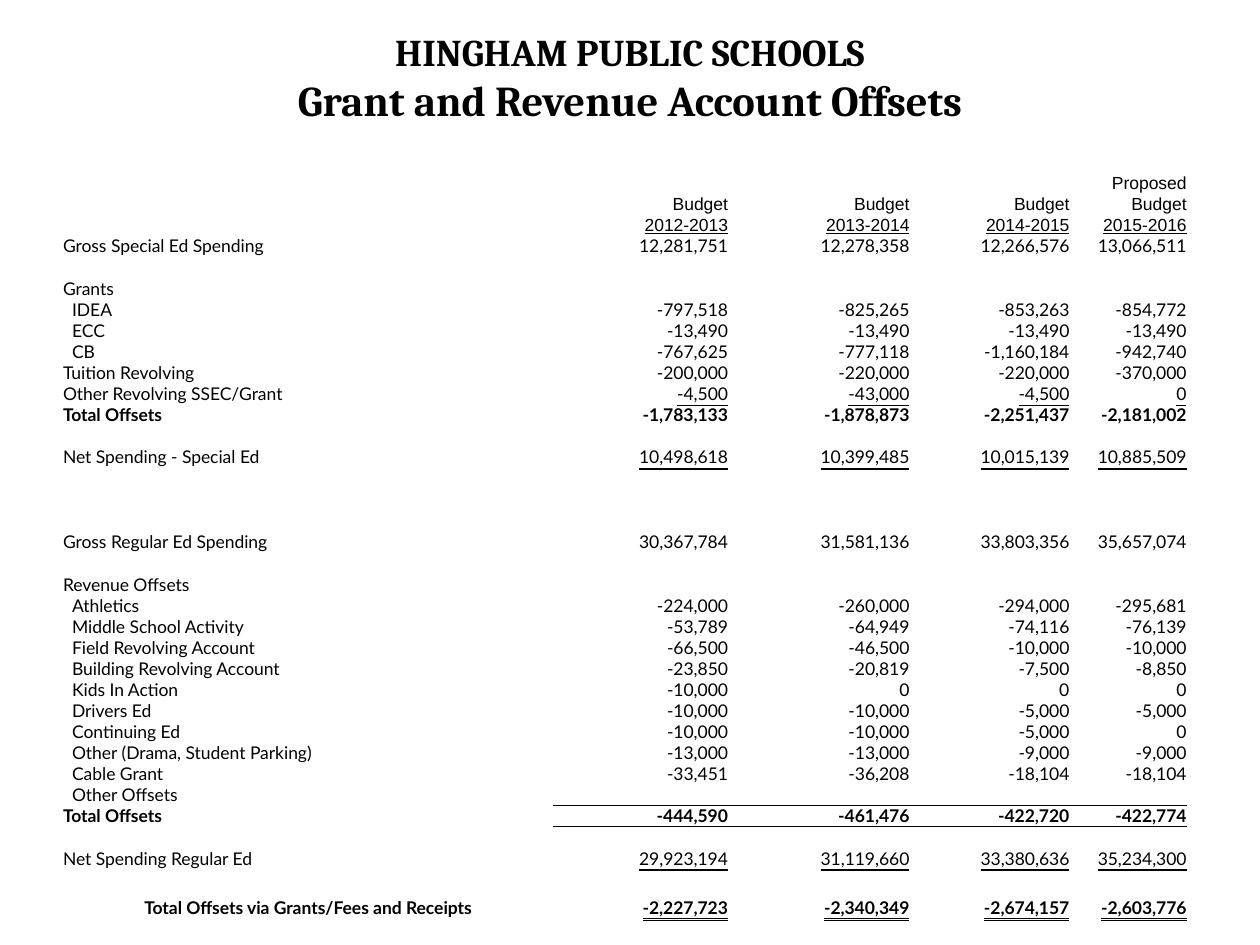
from lxml.etree import SubElement
from pptx import Presentation
from pptx.dml.color import RGBColor
from pptx.enum.text import MSO_ANCHOR, MSO_AUTO_SIZE, MSO_UNDERLINE, PP_ALIGN
from pptx.oxml import parse_xml
from pptx.oxml.ns import nsdecls, qn
from pptx.util import Pt

COLORS = {"text": "000000", "rule": "000000"}
NO_GRID_STYLE = "{2D5ABB26-0587-4C30-8999-92F81FD0307C}"
COLUMN_WIDTHS = [280, 100, 103.7, 91.4, 67]
FIRST_ROW, ROW, LAST_ROW = 32.4, 12, 16

HEADER = {"name": "Arial"}
YEARS = {"name": "Arial", "underline": True}
PLAIN = {}
INDENTED = {"indent": 5.2}
SUBTOTALED = {"underline": True}
TOTAL = {"bold": True}
RULED = {"indent": 5.2, "border": "lnB"}
RULED_TOTAL = {"bold": True, "border": "lnT"}
NET = {"underline": MSO_UNDERLINE.DOUBLE_LINE}
GRAND_TOTAL = {"bold": True, "underline": MSO_UNDERLINE.DOUBLE_LINE, "centered": True}

BLANK = ("", [""] * 4, PLAIN)
BUDGET = [
    ("", ["", "", "", "Proposed"], HEADER),
    ("", ["Budget"] * 4, HEADER),
    ("", ["2012-2013", "2013-2014", "2014-2015", "2015-2016"], YEARS),
    ("Gross Special Ed Spending", [12281751, 12278358, 12266576, 13066511], PLAIN),
    BLANK,
    ("Grants", [""] * 4, PLAIN),
    ("IDEA", [-797518, -825265, -853263, -854772], INDENTED),
    ("ECC", [-13490] * 4, INDENTED),
    ("CB", [-767625, -777118, -1160184, -942740], INDENTED),
    ("Tuition Revolving", [-200000, -220000, -220000, -370000], PLAIN),
    ("Other Revolving SSEC/Grant", [-4500, -43000, -4500, 0], SUBTOTALED),
    ("Total Offsets", [-1783133, -1878873, -2251437, -2181002], TOTAL),
    BLANK,
    ("Net Spending - Special Ed", [10498618, 10399485, 10015139, 10885509], NET),
    BLANK,
    BLANK,
    BLANK,
    ("Gross Regular Ed Spending", [30367784, 31581136, 33803356, 35657074], PLAIN),
    BLANK,
    ("Revenue Offsets", [""] * 4, PLAIN),
    ("Athletics", [-224000, -260000, -294000, -295681], INDENTED),
    ("Middle School Activity", [-53789, -64949, -74116, -76139], INDENTED),
    ("Field Revolving Account", [-66500, -46500, -10000, -10000], INDENTED),
    ("Building Revolving Account", [-23850, -20819, -7500, -8850], INDENTED),
    ("Kids In Action", [-10000, 0, 0, 0], INDENTED),
    ("Drivers Ed", [-10000, -10000, -5000, -5000], INDENTED),
    ("Continuing Ed", [-10000, -10000, -5000, 0], INDENTED),
    ("Other (Drama, Student Parking)", [-13000, -13000, -9000, -9000], INDENTED),
    ("Cable Grant", [-33451, -36208, -18104, -18104], INDENTED),
    ("Other Offsets", [""] * 4, RULED),
    ("Total Offsets", [-444590, -461476, -422720, -422774], RULED_TOTAL),
    BLANK,
    ("Net Spending Regular Ed", [29923194, 31119660, 33380636, 35234300], NET),
    BLANK,
    ("Total Offsets via Grants/Fees and Receipts",
     [-2227723, -2340349, -2674157, -2603776], GRAND_TOTAL),
]


class BudgetSlide:
    title_font = {"name": "Cambria", "bold": True}
    table_font = {"name": "Lato", "size": Pt(10), "bold": False, "underline": False}

    def __init__(self, presentation):
        self.slide = presentation.slides.add_slide(presentation.slide_layouts[5])

    def apply(self, target, values):
        for attribute, value in values.items():
            setattr(target, attribute, value)

    def add_run(self, paragraph, text, font):
        run = paragraph.add_run()
        run.text = text
        self.apply(run.font, font)
        run.font.color.rgb = RGBColor.from_string(COLORS["text"])

    def add_title(self, lines, left, top, width, height):
        title = self.slide.shapes.title
        self.apply(title, {"left": Pt(left), "top": Pt(top),
                           "width": Pt(width), "height": Pt(height)})
        frame = title.text_frame
        self.apply(frame, {"word_wrap": True, "auto_size": MSO_AUTO_SIZE.NONE,
                           "vertical_anchor": MSO_ANCHOR.MIDDLE})
        paragraph = frame.paragraphs[0]
        paragraph.alignment = PP_ALIGN.CENTER
        for number, (text, size) in enumerate(lines):
            if number:
                paragraph.add_line_break()
            self.add_run(paragraph, text, self.title_font | {"size": Pt(size)})

    def add_border(self, cell, side):
        line = parse_xml(
            f'<a:{side} {nsdecls("a")} w="{Pt(1)}"><a:solidFill>'
            f'<a:srgbClr val="{COLORS["rule"]}"/></a:solidFill></a:{side}>')
        cell._tc.get_or_add_tcPr().insert(0, line)

    def fill_cell(self, cell, text, alignment, font, indent=0):
        self.apply(cell, {"margin_left": Pt(indent), "margin_right": 0,
                          "margin_top": 0, "margin_bottom": 0,
                          "vertical_anchor": MSO_ANCHOR.BOTTOM})
        cell.fill.background()
        paragraph = cell.text_frame.paragraphs[0]
        paragraph.alignment = alignment
        if text:
            self.add_run(paragraph, text, self.table_font | font)
        else:
            SubElement(paragraph._p, qn("a:endParaRPr"), sz="1000")

    def add_table(self, rows, left, top):
        heights = [FIRST_ROW] + [ROW] * (len(rows) - 2) + [LAST_ROW]
        frame = self.slide.shapes.add_table(
            len(rows), len(COLUMN_WIDTHS), Pt(left), Pt(top),
            Pt(sum(COLUMN_WIDTHS)), Pt(sum(heights)))
        table = frame.table
        self.apply(table, {"first_row": False, "horz_banding": False})
        for style in frame.element.iter(qn("a:tableStyleId")):
            style.text = NO_GRID_STYLE
        for column, width in zip(table.columns, COLUMN_WIDTHS):
            column.width = Pt(width)
        for row, height, (label, values, style) in zip(table.rows, heights, rows):
            row.height = Pt(height)
            font = {key: style[key] for key in self.table_font if key in style}
            label_cell, *value_cells = row.cells
            alignment = PP_ALIGN.CENTER if style.get("centered") else PP_ALIGN.LEFT
            self.fill_cell(label_cell, label, alignment,
                           font | {"underline": False}, style.get("indent", 0))
            for cell, value in zip(value_cells, values):
                text = value if isinstance(value, str) else f"{value:,}"
                self.fill_cell(cell, text, PP_ALIGN.RIGHT, font)
                if "border" in style:
                    self.add_border(cell, style["border"])


def main():
    presentation = Presentation()
    presentation.slide_width, presentation.slide_height = Pt(720), Pt(540)
    budget_slide = BudgetSlide(presentation)
    budget_slide.add_title([("HINGHAM PUBLIC SCHOOLS", 21.6),
                            ("Grant and Revenue Account Offsets", 24.3)],
                           36, 21.6, 648, 44.6)
    budget_slide.add_table(BUDGET, 36, 77.8)
    presentation.save("out.pptx")


if __name__ == "__main__":
    main()
